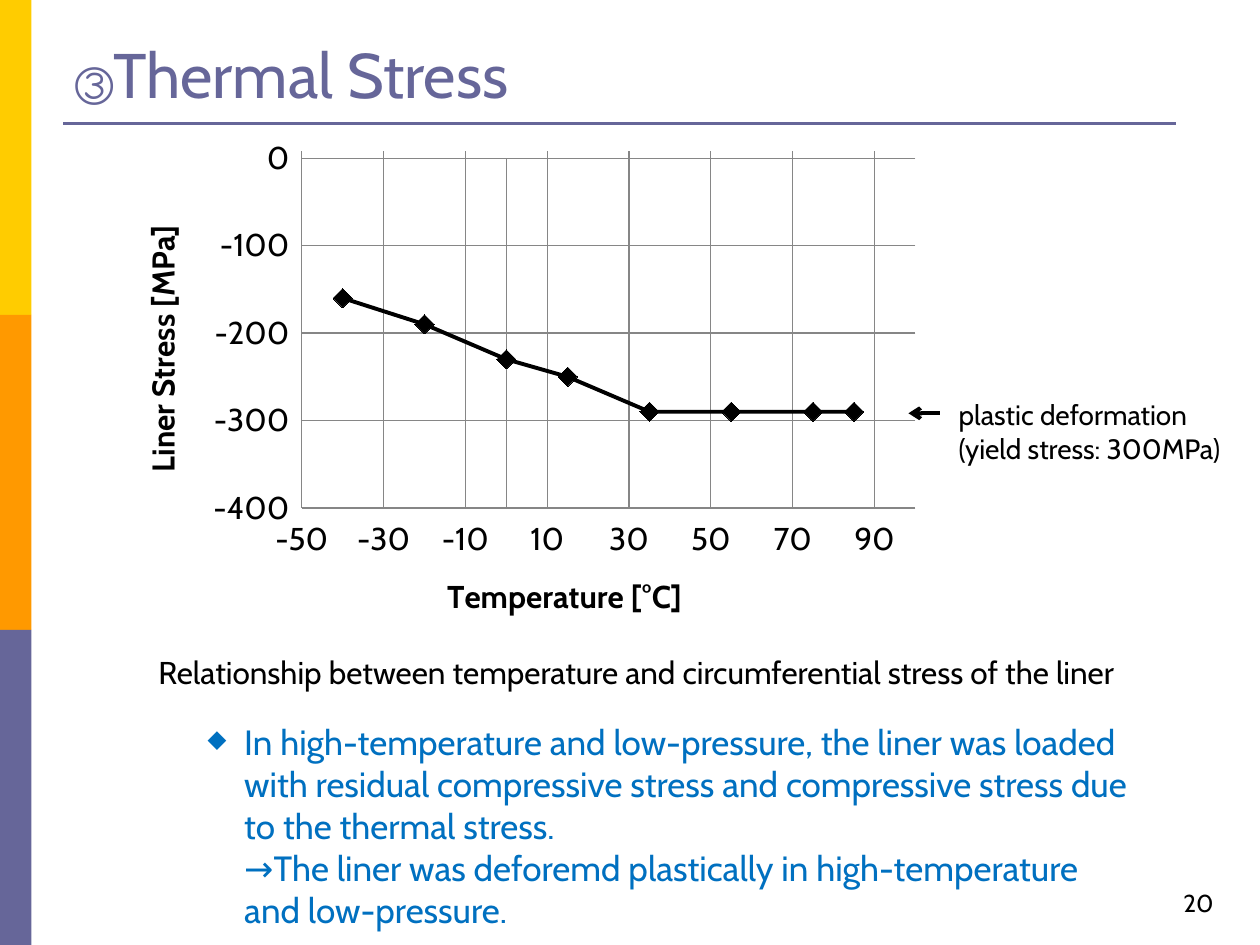
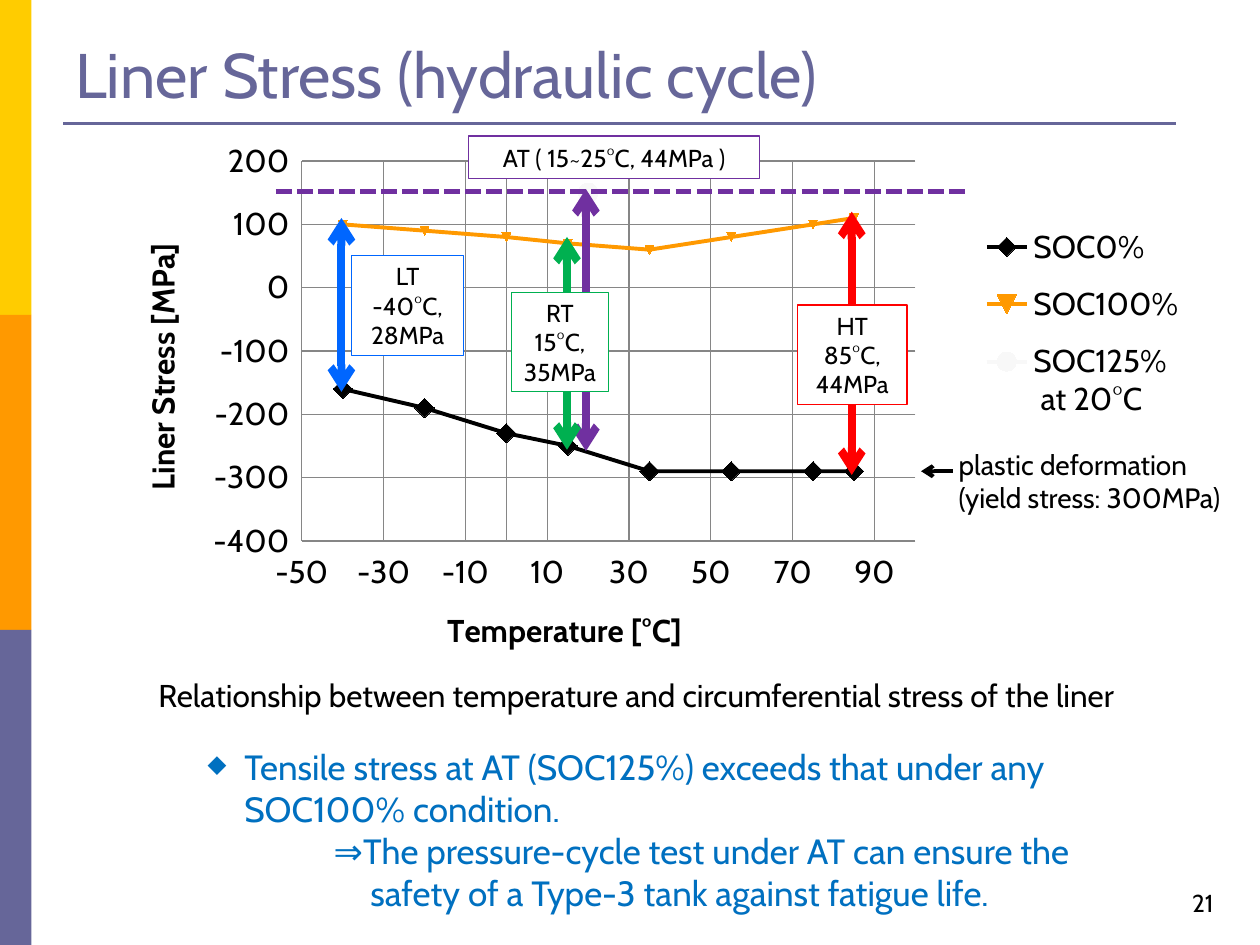
"""Build two slides on liner stress against temperature."""
from dataclasses import dataclass

from lxml import etree
from pptx import Presentation
from pptx import util as u
from pptx.chart import data as cd
from pptx.dml.color import RGBColor
from pptx.enum import chart as ch
from pptx.enum import dml, shapes, text
from pptx.oxml import parse_xml
from pptx.oxml import ns


@dataclass(frozen=True)
class Theme:
    font: str = "Cabin"
    mono: str = "DejaVu Sans Mono"
    ink: str = "000000"
    paper: str = "FFFFFF"
    faint: str = "F8F8F8"
    grid: str = "868686"
    title: str = "666699"
    gold: str = "FFCC00"
    amber: str = "FF9900"
    note: str = "0070C0"
    blue: str = "0066FF"
    red: str = "FF0000"
    green: str = "00B050"
    plum: str = "7030A0"
    big: int = 36
    body: int = 20
    mid: int = 18
    side: int = 16
    small: int = 14


T = Theme()
TEMPS = (-40, -20, 0, 15, 35, 55, 75, 85)
EMPTY = (-160, -190, -230, -250, -290, -290, -290, -290)
FULL = (100, 90, 80, 70, 60, 80, 100, 110)
PLOT = (0.156, 0.065, 0.569, 0.679)
MARK = ch.XL_MARKER_STYLE


def rgb(code):
    return RGBColor.from_string(code)


def place(x, y, w, h):
    return [u.Inches(n) for n in (x, y, w, h)]


def style(run, size, color, face=T.font):
    run.font.size = u.Pt(size)
    run.font.color.rgb = rgb(color)
    run.font.name = face
    east = etree.SubElement(run.font._element, ns.qn("a:ea"))
    east.set("typeface", face)


def fill_text(frame, lines, size, color, align=text.PP_ALIGN.LEFT):
    frame.word_wrap = True
    frame.text = "\n".join(lines)
    for para in frame.paragraphs:
        para.alignment = align
        for run in para.runs:
            style(run, size, color)
    return frame


def add_text(slide, box, lines, size, color, align=text.PP_ALIGN.LEFT,
             anchor=text.MSO_ANCHOR.TOP):
    frame = slide.shapes.add_textbox(*place(*box)).text_frame
    frame.vertical_anchor = anchor
    return fill_text(frame, lines, size, color, align)


def add_rect(slide, box, fill, edge=None):
    rect = slide.shapes.add_shape(shapes.MSO_SHAPE.RECTANGLE, *place(*box))
    rect.shadow.inherit = False
    rect.fill.solid()
    rect.fill.fore_color.rgb = rgb(fill)
    if edge:
        rect.line.color.rgb = rgb(edge)
        rect.line.width = u.Pt(0.75)
    else:
        rect.line.fill.background()
    return rect


def add_line(slide, start, end, color, width, ends=(), dash=None):
    line = slide.shapes.add_connector(
        shapes.MSO_CONNECTOR.STRAIGHT, *place(*start, *end))
    line.line.color.rgb = rgb(color)
    line.line.width = u.Pt(width)
    if dash:
        line.line.dash_style = dash
    props = line._element.spPr
    for tag in ends:
        tip = etree.SubElement(props.find(ns.qn("a:ln")), ns.qn(tag))
        tip.set("type", "arrow")
    etree.SubElement(props, ns.qn("a:effectLst"))


def add_label(slide, box, lines, color):
    frame = add_rect(slide, box, T.paper, color).text_frame
    frame.margin_left = frame.margin_right = u.Inches(0.05)
    frame.vertical_anchor = text.MSO_ANCHOR.MIDDLE
    fill_text(frame, lines, T.small, T.ink, text.PP_ALIGN.CENTER)


def add_span(slide, x, top, low, color):
    add_line(slide, (x, top), (x, low), color, 4.5, ("a:headEnd", "a:tailEnd"))


def add_frame(slide, number):
    for i, color in enumerate((T.gold, T.amber, T.title)):
        add_rect(slide, (0, 2.5 * i, 0.25, 2.5), color)
    add_line(slide, (0.5, 0.98), (9.33, 0.98), T.title, 1.5)
    add_text(slide, (8.94, 6.83, 0.79, 0.5), [number], T.small, T.ink,
             text.PP_ALIGN.RIGHT, text.MSO_ANCHOR.BOTTOM)


def add_title(slide, words, mark=""):
    frame = add_text(slide, (0.5, 0.1, 9, 0.83), [mark or words], T.big,
                     T.title, anchor=text.MSO_ANCHOR.BOTTOM)
    if mark:
        para = frame.paragraphs[0]
        style(para.runs[0], T.big, T.title, T.mono)
        run = para.add_run()
        run.text = words
        style(run, T.big, T.title)


def add_points(slide, box, lines, left):
    frame = add_text(slide, box, lines, T.body, T.note)
    head, rest = (para._p.get_or_add_pPr() for para in frame.paragraphs)
    hang = u.Inches(0.29)
    for props, edge, pull in ((head, hang, -hang), (rest, *left)):
        props.set("marL", str(edge))
        props.set("indent", str(pull))
    size = etree.SubElement(head, ns.qn("a:buSzPct"))
    size.set("val", "70000")
    mark = etree.SubElement(head, ns.qn("a:buChar"))
    mark.set("char", "◆")


def set_layout(part, index, box, inner=False):
    for old in part.findall(ns.qn("c:layout")):
        part.remove(old)
    target = '<c:layoutTarget val="inner"/>' if inner else ""
    modes = "".join(f'<c:{k}Mode val="edge"/>' for k in "xy")
    sizes = "".join(f'<c:{k} val="{v}"/>' for k, v in zip("xywh", box))
    part.insert(index, parse_xml(
        f'<c:layout {ns.nsdecls("c")}><c:manualLayout>{target}{modes}{sizes}'
        "</c:manualLayout></c:layout>"))


def set_axis(axis, title, low, high, step):
    axis.minimum_scale, axis.maximum_scale = low, high
    axis.major_unit = step
    axis.has_major_gridlines = True
    axis.major_tick_mark = ch.XL_TICK_MARK.CROSS
    axis.tick_label_position = ch.XL_TICK_LABEL_POSITION.LOW
    for line in (axis.format.line, axis.major_gridlines.format.line):
        line.color.rgb = rgb(T.grid)
        line.width = u.Pt(0.75)
    frame = axis.axis_title.text_frame
    frame.text = title
    run = frame.paragraphs[0].runs[0]
    style(run, T.mid, T.ink)
    run.font.bold = True
    return frame


def add_graph(slide, height, top, series):
    data = cd.XyChartData()
    for name, points, *_ in series:
        row = data.add_series(name)
        for x, y in points:
            row.add_data_point(x, y)
    graph = slide.shapes.add_chart(
        ch.XL_CHART_TYPE.XY_SCATTER_LINES,
        *place(1.06, 0.99, 8.56, height), data).chart
    graph.has_title = False
    graph.font.name = T.font
    graph.font.size = u.Pt(T.mid)
    graph.font.color.rgb = rgb(T.ink)
    plot = graph.plots[0]
    plot.vary_by_categories = False
    set_axis(graph.category_axis, "Temperature [°C]", -50, 100, 20)
    frame = set_axis(graph.value_axis, "Liner Stress [MPa]", -400, top, 100)
    frame._txBody.bodyPr.set("rot", "-5400000")
    set_layout(graph._chartSpace.chart.plotArea, 0, PLOT, True)
    for row, (_, _, color, mark, size) in zip(plot.series, series):
        row.smooth = False
        row.format.line.color.rgb = rgb(color)
        row.format.line.width = u.Pt(2.25)
        row.marker.style, row.marker.size = mark, size
        row.marker.format.fill.solid()
        row.marker.format.fill.fore_color.rgb = rgb(color)
        row.marker.format.line.color.rgb = rgb(color)
    graph.has_legend = len(series) > 1
    if graph.has_legend:
        graph.legend.position = ch.XL_LEGEND_POSITION.RIGHT
        graph.legend.include_in_layout = False
        set_layout(graph.legend._element, 1, (0.78, 0.15, 0.2, 0.41))


def add_caption(slide, top):
    add_text(slide, (1.16, top, 8.34, 0.4),
             ["Relationship between temperature and circumferential stress "
              "of the liner"], T.mid, T.ink)


def add_yield(slide, top, tip, y):
    add_text(slide, (7.51, top, 2.49, 0.64),
             ["plastic deformation", "(yield stress: 300MPa)"], T.side, T.ink)
    add_line(slide, (tip + 0.25, y), (tip, y), T.ink, 2.25, ("a:tailEnd",))


def thermal(slide):
    add_frame(slide, "20")
    add_title(slide, "Thermal Stress", "③")
    add_graph(slide, 4.09, 0, [
        ("Series 1", zip(TEMPS, EMPTY), T.ink, MARK.DIAMOND, 11)])
    add_caption(slide, 5.13)
    add_points(slide, (1.55, 5.67, 7.53, 1.78), [
        "In high-temperature and low-pressure, the liner was loaded with "
        "residual compressive stress and compressive stress due to the "
        "thermal stress.",
        "→The liner was deforemd plastically in high-temperature and "
        "low-pressure."], (u.Inches(0.29), 0))
    add_yield(slide, 3.11, 7.21, 3.28)


def cycle(slide):
    add_frame(slide, "21")
    add_title(slide, "Liner Stress (hydraulic cycle)")
    add_graph(slide, 4.44, 200, [
        ("SOC0%", zip(TEMPS, EMPTY), T.ink, MARK.DIAMOND, 11),
        ("SOC100%", zip(TEMPS, FULL), T.amber, MARK.AUTOMATIC, 5),
        ("SOC125%\n at 20°C", [(20, 150)], T.faint, MARK.CIRCLE, 11)])
    add_caption(slide, 5.32)
    add_points(slide, (1.55, 5.87, 7.58, 1.45), [
        "Tensile stress at AT (SOC125%) exceeds that under any SOC100% "
        "condition.",
        "⇒The pressure-cycle test under AT can ensure the safety of a "
        "Type-3 tank against fatigue life."],
        (u.Inches(1.29), -u.Inches(0.29)))
    add_yield(slide, 3.5, 7.31, 3.74)
    tests = [
        (2.71, 1.73, 3.11, T.blue, (2.79, 2.03, 0.89, 0.79),
         ["LT", "-40°C,", "28MPa"]),
        (6.76, 1.68, 3.77, T.red, (6.33, 2.42, 0.87, 0.79),
         ["HT", "85°C,", "44MPa"]),
        (4.65, 1.5, 3.58, T.plum, (3.72, 1.08, 2.31, 0.34),
         ["AT ( 15~25°C, 44MPa )"]),
        (4.5, 1.88, 3.57, T.green, (4.06, 2.32, 0.77, 0.79),
         ["RT", "15°C,", "35MPa"]),
    ]
    for x, top, low, color, box, lines in tests:
        add_span(slide, x, top, low, color)
        add_label(slide, box, lines, color)
    add_line(slide, (2.19, 1.52), (7.66, 1.52), T.plum, 3,
             dash=dml.MSO_LINE.SQUARE_DOT)


def main():
    deck = Presentation()
    deck.slide_width, deck.slide_height = u.Inches(10), u.Inches(7.5)
    for build in (thermal, cycle):
        build(deck.slides.add_slide(deck.slide_layouts[6]))
    deck.save("out.pptx")


if __name__ == "__main__":
    main()
